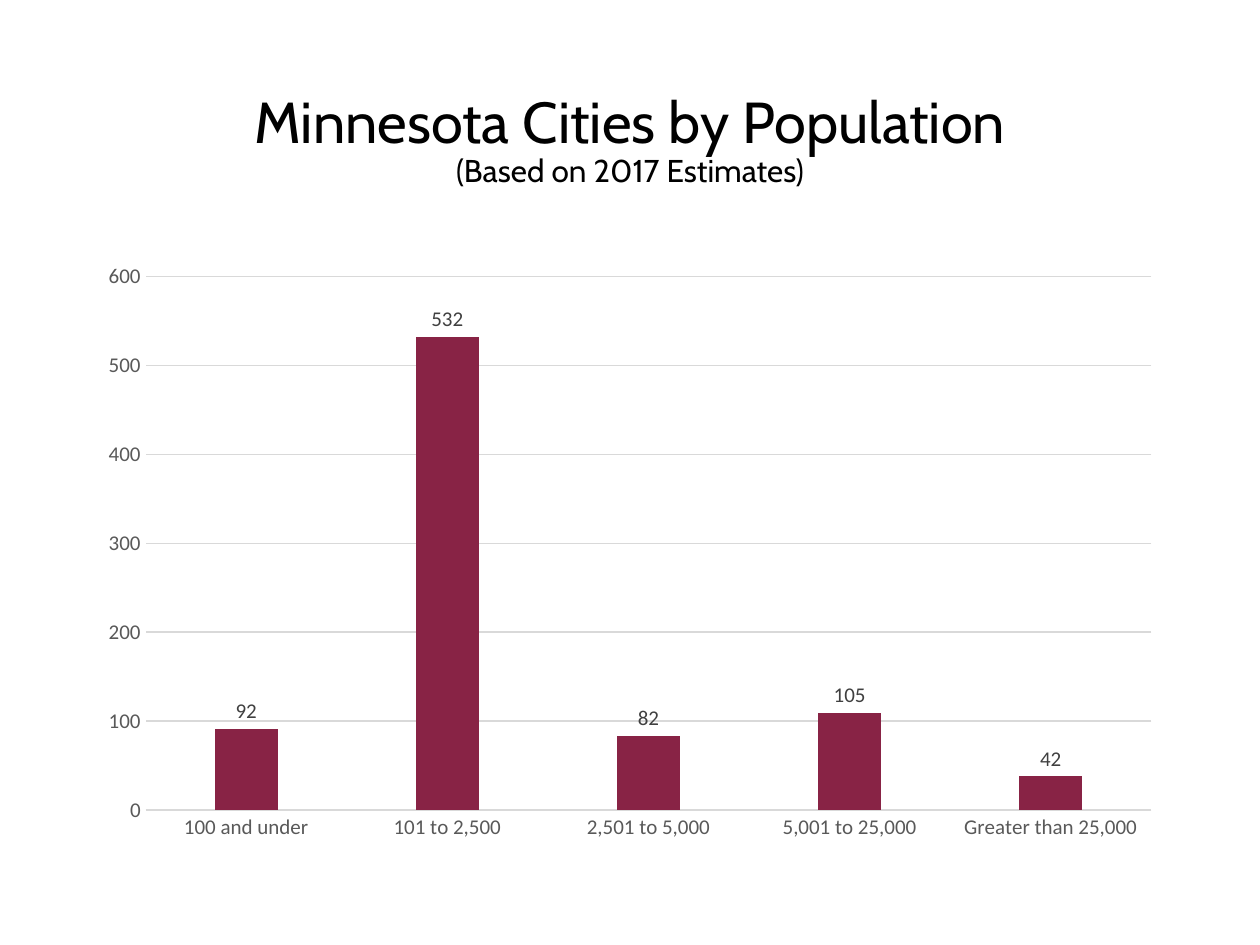
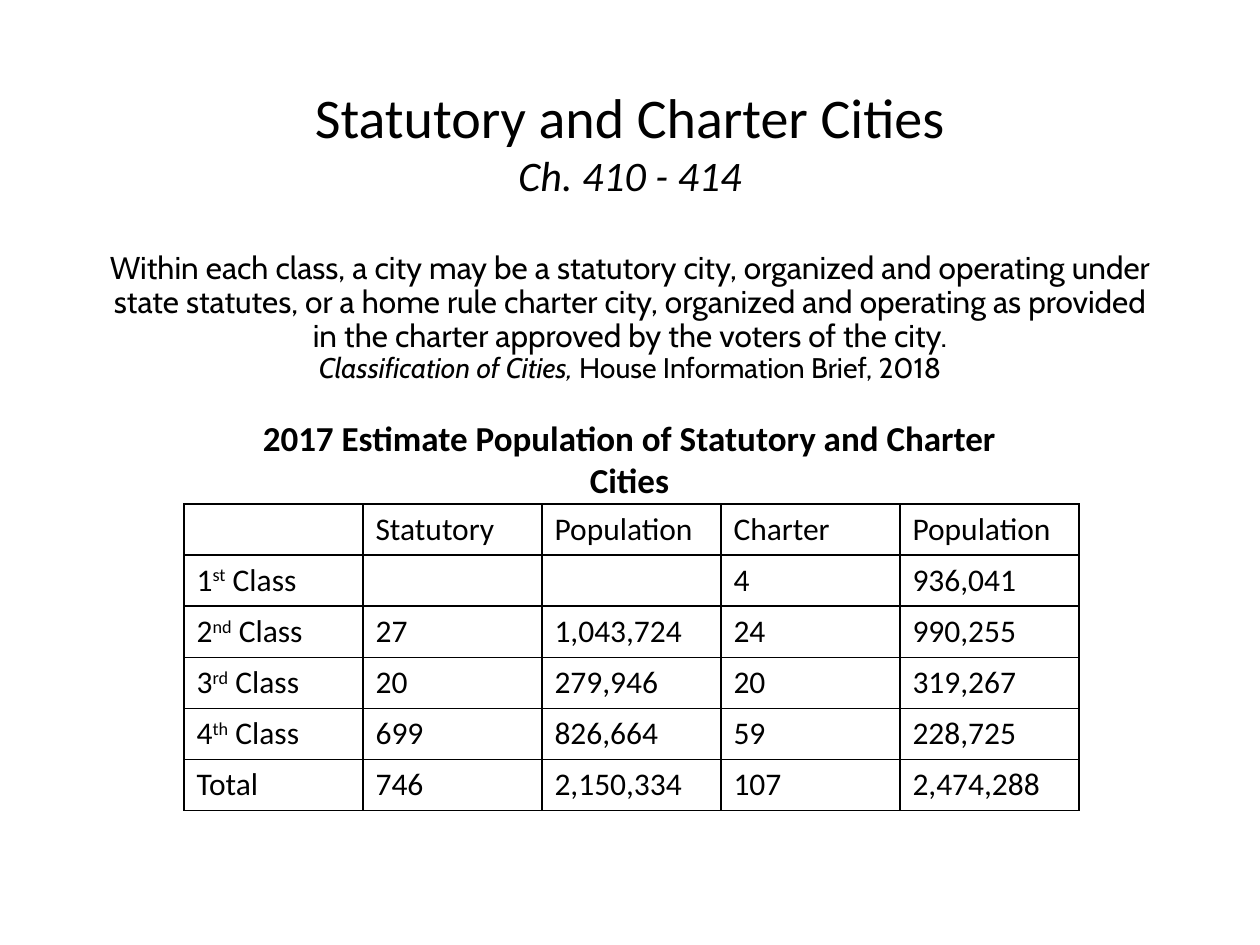
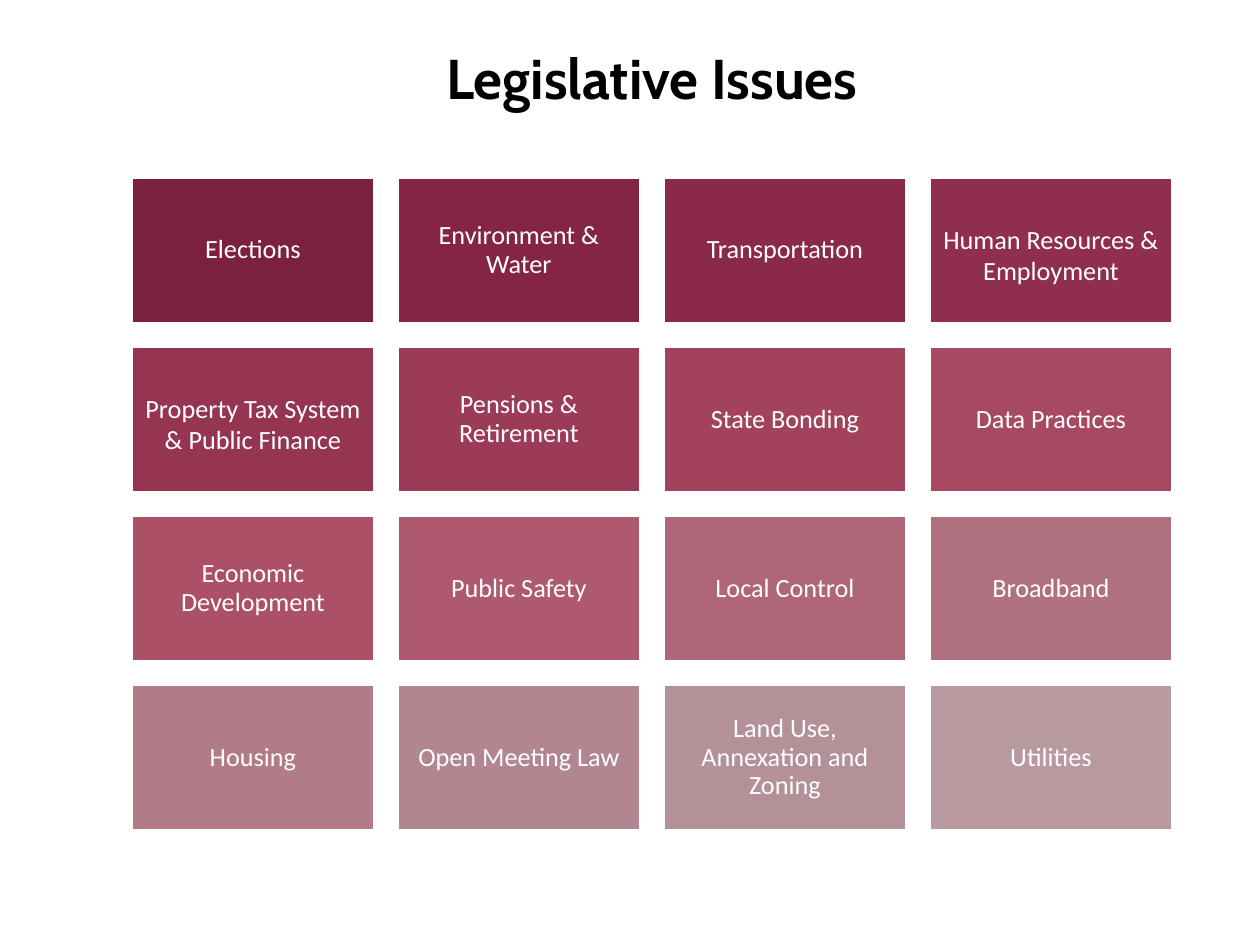
"""Build three slides on Minnesota cities: population chart, class table and issue grid."""
from copy import deepcopy
from dataclasses import dataclass

from lxml.etree import SubElement
from pptx import Presentation
from pptx.chart.data import CategoryChartData
from pptx.dml.color import RGBColor
from pptx.enum.chart import XL_CHART_TYPE, XL_LABEL_POSITION, XL_TICK_MARK
from pptx.enum.shapes import MSO_SHAPE
from pptx.enum.text import MSO_ANCHOR, MSO_AUTO_SIZE, PP_ALIGN
from pptx.oxml.ns import qn
from pptx.util import Pt


@dataclass(frozen=True)
class Theme:
    head: str = "Cabin"
    body: str = "Calibri"
    ink: str = "000000"
    white: str = "FFFFFF"
    bar: str = "882345"
    grid: str = "D9D9D9"
    axis: str = "595959"
    label: str = "404040"
    tiles: tuple = (
        "7B203F", "832543", "8A2A48", "902F4D", "963552", "9C3B58", "A2425D", "A74963",
        "AC5068", "AD5A70", "AE6678", "AF7180", "B17B88", "B28690", "B49098", "B7999F")
    large: float = 33
    title: float = 32
    sub: float = 24
    lead: float = 20
    text: float = 18
    cite: float = 16.2
    tile: float = 15
    chart: float = 12


T = Theme()
SCALE = 914400 / 126

POP_HEAD = [[("Minnesota Cities by Population", T.large, {})],
            [("(Based on 2017 Estimates)", T.text, {})]]
COUNTS = [("100 and under", 91, "92"), ("101 to 2,500", 532, "532"),
          ("2,501 to 5,000", 83, "82"), ("5,001 to 25,000", 109, "105"),
          ("Greater than 25,000", 38, "42")]

CLASS_HEAD = [
    [("Within each class, a city may be a statutory city, organized and operating under "
      "state statutes, or a home rule charter city, organized and operating as provided "
      "in the charter approved by the voters of the city.", T.text, {})],
    [("Classification of Cities, ", T.cite, {"italic": True}),
     ("House Information Brief, 2018", T.cite, {})]]
NOTES = [
    ((231, 76, 798, 131), [("Statutory and Charter Cities", T.title, {}),
                           ("Ch. 410 - 414", T.sub, {"italic": True})]),
    ((220, 410, 819, 97), [("2017 Estimate Population of Statutory and Charter Cities",
                            T.lead, {"bold": True})])]
ROWS = [
    ("", "Statutory", "Population", "Charter", "Population"),
    (("1", "st", " Class"), "", "", "4", "936,041"),
    (("2", "nd", " Class"), "27", "1,043,724", "24", "990,255"),
    (("3", "rd", " Class"), "20", "279,946", "20", "319,267"),
    (("4", "th", " Class"), "699", "826,664", "59", "228,725"),
    ("Total", "746", "2,150,334", "107", "2,474,288")]

ISSUE_HEAD = [[("Legislative Issues", T.title, {"bold": True})]]
ISSUES = [
    "Elections", "Environment & Water", "Transportation", "Human Resources & Employment",
    "Property Tax System & Public Finance", "Pensions & Retirement", "State Bonding",
    "Data Practices", "Economic Development", "Public Safety", "Local Control", "Broadband",
    "Housing", "Open Meeting Law", "Land Use, Annexation and Zoning", "Utilities"]
LOOSE = {"Human Resources & Employment", "Property Tax System & Public Finance"}


def px(*sizes):
    """Turn pixel lengths into EMU."""
    return [round(size * SCALE) for size in sizes]


def style(font, size, color=T.ink, face=T.body, **marks):
    """Format one font."""
    font.name, font.size = face, Pt(size)
    font.color.rgb = RGBColor.from_string(color)
    for name, flag in marks.items():
        setattr(font, name, flag)


def add_slide(deck, box, lines):
    """Add a slide whose title holds lines of styled runs."""
    slide = deck.slides.add_slide(deck.slide_layouts[5])
    title = slide.shapes.title
    title.left, title.top, title.width, title.height = px(*box)
    frame = title.text_frame
    frame.word_wrap, frame.auto_size = True, MSO_AUTO_SIZE.NONE
    frame.vertical_anchor = MSO_ANCHOR.MIDDLE
    para = frame.paragraphs[0]
    para.alignment, para.line_spacing = PP_ALIGN.CENTER, 0.9
    for row, line in enumerate(lines):
        if row:
            para.add_line_break()
            para._p[-1].append(deepcopy(para.runs[-1]._r.rPr))
        for text, size, marks in line:
            run = para.add_run()
            run.text = text
            style(run.font, size, face=T.head, **marks)
    return slide


def add_note(slide, box, lines):
    """Add a centred text box with one paragraph a line."""
    frame = slide.shapes.add_textbox(*px(*box)).text_frame
    frame.word_wrap = True
    frame.text = "\n".join(text for text, _, _ in lines)
    for para, (_, size, marks) in zip(frame.paragraphs, lines):
        para.alignment = PP_ALIGN.CENTER
        style(para.runs[0].font, size, **marks)


def rule(line):
    """Draw a thin grey chart line."""
    line.color.rgb = RGBColor.from_string(T.grid)
    line.width = Pt(0.75)


def add_bars(slide):
    """Add the column chart of city counts."""
    data = CategoryChartData()
    data.categories = [name for name, _, _ in COUNTS]
    data.add_series("Series 1", [count for _, count, _ in COUNTS])
    chart = slide.shapes.add_chart(
        XL_CHART_TYPE.COLUMN_CLUSTERED, *px(87, 252, 1086, 600), data).chart
    chart.has_title = chart.has_legend = False
    style(chart.font, 10)
    for axis in (chart.category_axis, chart.value_axis):
        axis.major_tick_mark = axis.minor_tick_mark = XL_TICK_MARK.NONE
        style(axis.tick_labels.font, T.chart, T.axis)
    rule(chart.category_axis.format.line)
    value = chart.value_axis
    value.minimum_scale, value.maximum_scale, value.major_unit = 0, 600, 100
    value.format.line.fill.background()
    rule(value.major_gridlines.format.line)
    plot = chart.plots[0]
    plot.gap_width, plot.overlap, plot.vary_by_categories = 219, -27, False
    series = plot.series[0]
    series.format.fill.solid()
    series.format.fill.fore_color.rgb = RGBColor.from_string(T.bar)
    labels = series.data_labels
    labels.show_value, labels.position = True, XL_LABEL_POSITION.OUTSIDE_END
    style(labels.font, T.chart, T.label)
    for spot, (_, count, text) in enumerate(COUNTS):
        if text != str(count):
            label = series.points[spot].data_label
            label.text_frame.text = text
            label.position = XL_LABEL_POSITION.OUTSIDE_END
            style(label.text_frame.paragraphs[0].runs[0].font, T.chart, T.label)


def frame_cell(cell):
    """Clear the fill of a cell and rule its four sides."""
    props = cell._tc.get_or_add_tcPr()
    for side in ("a:lnL", "a:lnR", "a:lnT", "a:lnB"):
        line = SubElement(props, qn(side), w=str(Pt(1)))
        SubElement(SubElement(line, qn("a:solidFill")), qn("a:srgbClr"), val=T.ink)
    cell.fill.background()


def add_grid(slide):
    """Add the table of city classes."""
    wide, high = 179, 51
    table = slide.shapes.add_table(
        len(ROWS), len(ROWS[0]), *px(184, 504, wide * len(ROWS[0]), high * len(ROWS))).table
    table.first_row = table.horz_banding = False
    for col in table.columns:
        col.width = px(wide)[0]
    for row, texts in zip(table.rows, ROWS):
        row.height = px(high)[0]
        for cell, text in zip(row.cells, texts):
            frame_cell(cell)
            para = cell.text_frame.paragraphs[0]
            style(para.font, T.text)
            for part in (text if isinstance(text, tuple) else (text,)):
                if part:
                    run = para.add_run()
                    run.text = part
                    style(run.font, T.text)
            if len(para.runs) == 3:
                para.runs[1].font._element.set("baseline", "30000")


def add_tiles(slide):
    """Add the four by four grid of issue tiles."""
    for spot, (text, color) in enumerate(zip(ISSUES, T.tiles)):
        row, col = divmod(spot, 4)
        tile = slide.shapes.add_shape(
            MSO_SHAPE.RECTANGLE, *px(132 + 266 * col, 178 + 169 * row, 242, 145))
        tile.shadow.inherit = False
        tile.fill.solid()
        tile.fill.fore_color.rgb = RGBColor.from_string(color)
        tile.line.color.rgb = RGBColor.from_string(T.white)
        tile.line.width = Pt(1)
        frame = tile.text_frame
        frame.word_wrap, frame.vertical_anchor = True, MSO_ANCHOR.MIDDLE
        side, top = px(8, 16 if text in LOOSE else 8)
        frame.margin_left = frame.margin_right = frame.margin_bottom = side
        frame.margin_top = top
        frame.text = text
        para = frame.paragraphs[0]
        para.alignment = PP_ALIGN.CENTER
        para.line_spacing = 1.0 if text in LOOSE else 0.9
        style(para.runs[0].font, T.tile, T.white)


def main():
    """Build and save the deck."""
    deck = Presentation()
    deck.slide_width, deck.slide_height = px(1260, 945)
    add_bars(add_slide(deck, (87, 50, 1086, 183), POP_HEAD))
    classes = add_slide(deck, (87, 227, 1086, 183), CLASS_HEAD)
    add_grid(classes)
    for box, lines in NOTES:
        add_note(classes, box, lines)
    add_tiles(add_slide(deck, (127, 2, 1050, 158), ISSUE_HEAD))
    deck.save("out.pptx")


if __name__ == "__main__":
    main()
